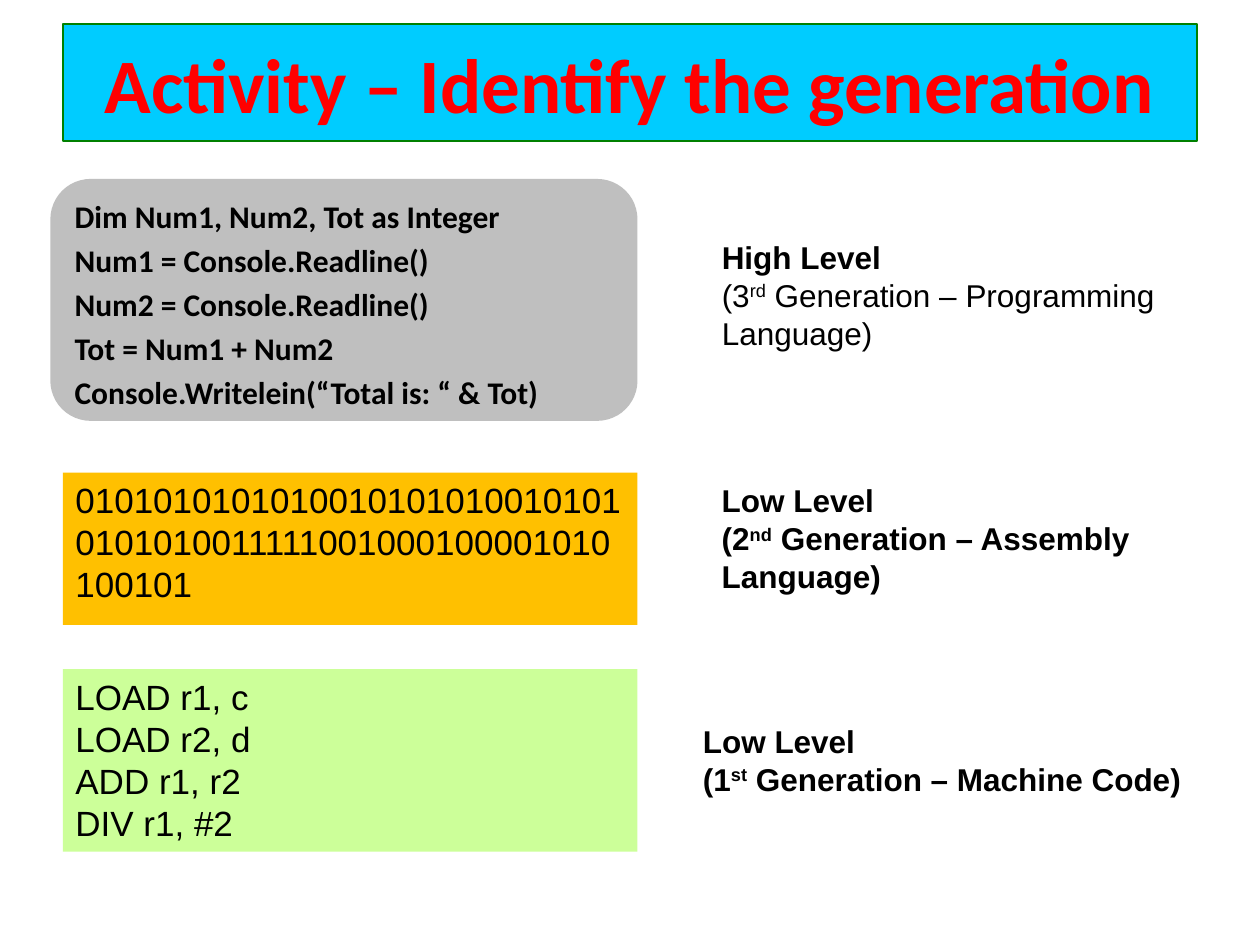
from pptx import Presentation
from pptx.dml.color import RGBColor
from pptx.enum.shapes import MSO_SHAPE
from pptx.enum.text import MSO_ANCHOR, MSO_AUTO_SIZE, PP_ALIGN
from pptx.util import Inches, Pt

RECTANGLE, ROUNDED = MSO_SHAPE.RECTANGLE, MSO_SHAPE.ROUNDED_RECTANGLE
TOP, MIDDLE = MSO_ANCHOR.TOP, MSO_ANCHOR.MIDDLE
LEFT, CENTER = PP_ALIGN.LEFT, PP_ALIGN.CENTER
NO_FIT = MSO_AUTO_SIZE.NONE
TITLE_ONLY = 5

COLORS = {
    "title_fill": "00CCFF", "title_line": "008000", "title_text": "FF0000",
    "program": "BFBFBF", "binary": "FFC000", "assembly": "CCFF99",
    "text": "000000",
}

# Grid of 100 columns by 75 rows over a 10 by 7.5 inch slide
WIDTH, HEIGHT = Inches(10), Inches(7.5)
COLUMN, ROW = WIDTH / 100, HEIGHT / 75


def color(name):
    return RGBColor.from_string(COLORS[name])


def grid_box(left, top, width, height):
    return (round(left * COLUMN), round(top * ROW),
            round(width * COLUMN), round(height * ROW))


def add_run(paragraph, text, size, font="Arial", bold=False,
            color_name="text", raised=False):
    run = paragraph.add_run()
    run.text = text
    run.font.name = font
    run.font.size = Pt(size)
    run.font.bold = bold
    run.font.color.rgb = color(color_name)
    if raised:
        run.font._element.set("baseline", "30000")


def next_paragraph(frame, index, space=0):
    paragraph = frame.add_paragraph() if index else frame.paragraphs[0]
    paragraph.alignment = LEFT
    paragraph.space_before = Pt(space if index else 0)
    return paragraph


def prepare_frame(shape, anchor):
    frame = shape.text_frame
    frame.word_wrap = True
    frame.auto_size = NO_FIT
    frame.vertical_anchor = anchor
    return frame


def build_title(slide, box, text):
    title = slide.shapes.title
    title.left, title.top, title.width, title.height = grid_box(*box)
    title.fill.solid()
    title.fill.fore_color.rgb = color("title_fill")
    title.line.color.rgb = color("title_line")
    title.line.width = Pt(0.75)
    paragraph = prepare_frame(title, MIDDLE).paragraphs[0]
    paragraph.alignment = CENTER
    add_run(paragraph, text, 44, "Calibri", True, "title_text")


def build_code_panel(slide, box, kind, fill, lines, size, font, bold, space):
    panel = slide.shapes.add_shape(kind, *grid_box(*box))
    panel.shadow.inherit = False
    panel.fill.solid()
    panel.fill.fore_color.rgb = color(fill)
    panel.line.fill.background()
    frame = prepare_frame(panel, TOP)
    for index, line in enumerate(lines):
        add_run(next_paragraph(frame, index, space), line, size, font, bold)


def build_answer(slide, box, level, ordinal, description, bold):
    answer = slide.shapes.add_textbox(*grid_box(*box))
    frame = prepare_frame(answer, TOP)
    add_run(next_paragraph(frame, 0), level, 18, bold=True)
    paragraph = next_paragraph(frame, 1)
    number, suffix = ordinal
    add_run(paragraph, f"({number}", 18, bold=bold)
    add_run(paragraph, suffix, 18, bold=bold, raised=True)
    add_run(paragraph, f" Generation – {description})", 18, bold=bold)


def main():
    presentation = Presentation()
    presentation.slide_width, presentation.slide_height = WIDTH, HEIGHT
    slide = presentation.slides.add_slide(
        presentation.slide_layouts[TITLE_ONLY])

    build_title(slide, (5, 1.9, 90, 9.3), "Activity – Identify the generation")

    # Code samples on the left
    build_code_panel(slide, (4, 14.2, 46.6, 19.2), ROUNDED, "program", [
        "Dim Num1, Num2, Tot as Integer",
        "Num1 = Console.Readline()",
        "Num2 = Console.Readline()",
        "Tot = Num1 + Num2",
        "Console.Writelein(“Total is: “ & Tot)",
    ], 18, "Calibri", True, 3.6)
    build_code_panel(slide, (5, 37.5, 45.6, 12.1), RECTANGLE, "binary", [
        "01010101010100101010100101010101010011111001000100001010100101",
    ], 20, "Arial", False, 0)
    build_code_panel(slide, (5, 53.1, 45.6, 14.5), RECTANGLE, "assembly", [
        "LOAD r1, c", "LOAD r2, d", "ADD r1, r2", "DIV r1, #2",
    ], 20, "Arial", False, 0)

    # Generations on the right
    build_answer(slide, (56.3, 18.4, 42.8, 10.1), "High Level",
                 ("3", "rd"), "Programming Language", False)
    build_answer(slide, (56.3, 37.7, 41.3, 10.1), "Low Level",
                 ("2", "nd"), "Assembly Language", True)
    build_answer(slide, (54.8, 56.8, 42.1, 7.1), "Low Level",
                 ("1", "st"), "Machine Code", True)

    presentation.save("out.pptx")


if __name__ == "__main__":
    main()
